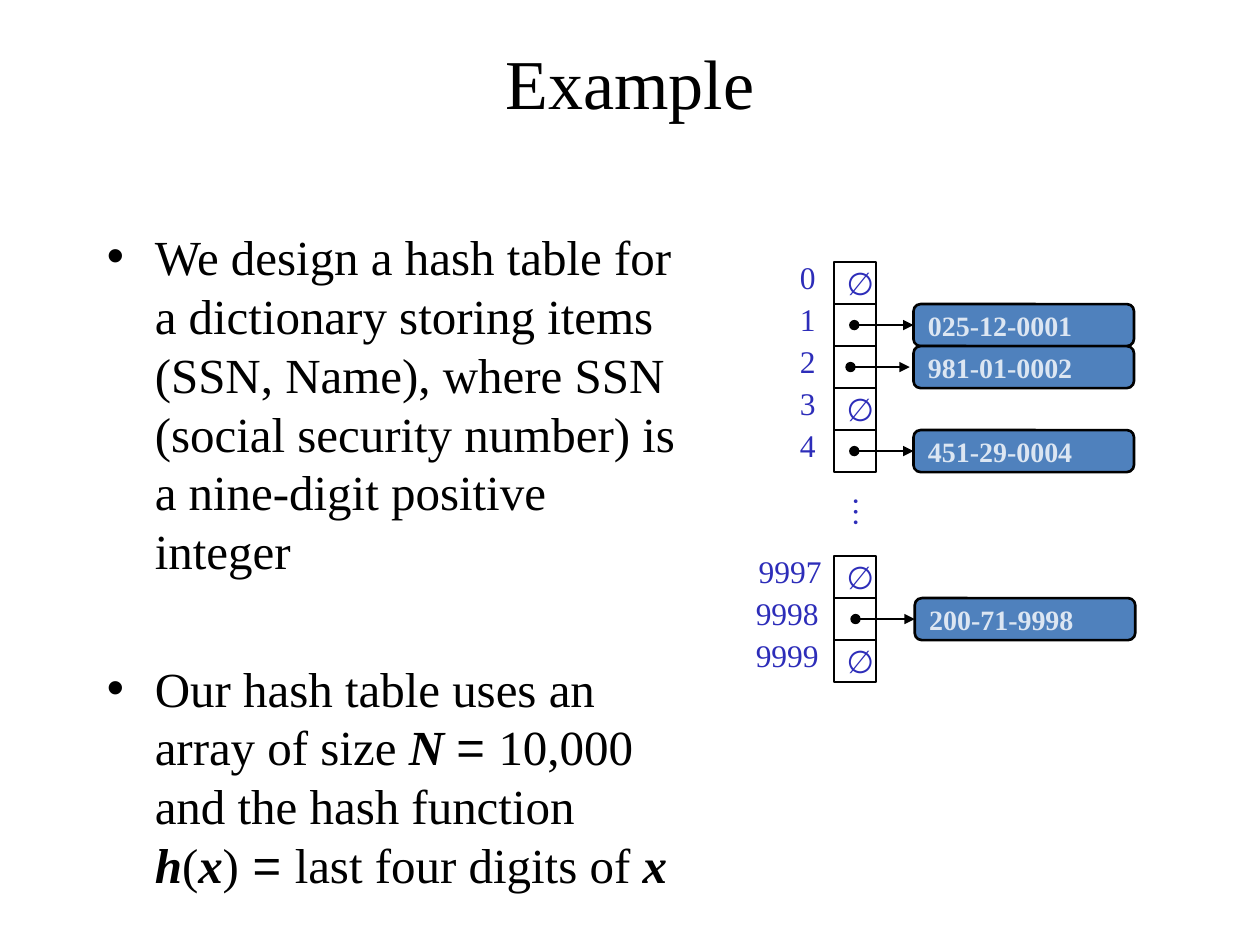
from lxml.etree import SubElement
from pptx import Presentation
from pptx.dml.color import RGBColor
from pptx.enum.shapes import MSO_CONNECTOR, MSO_SHAPE
from pptx.enum.text import MSO_ANCHOR, PP_ALIGN
from pptx.oxml.ns import qn
from pptx.util import Inches, Pt

COLORS = {
    "text": "000000",
    "index": "2D2DB9",
    "entry": "4F81BD",
    "entry_text": "DCE6F2",
}
SERIF = "Times New Roman"
ROW = 1 / 3
SLOTS = [
    (0, "0", 0.39, None),
    (1, "1", 0.39, ("025-12-0001", 0.92, 1.39)),
    (2, "2", 0.39, ("981-01-0002", 0.89, 1.36)),
    (3, "3", 0.39, None),
    (4, "4", 0.39, ("451-29-0004", 0.92, 1.39)),
    (7, "9997", 0, None),
    (8, "9998", 0.04, ("200-71-9998", 0.93, 1.4)),
    (9, "9999", 0.04, None),
]
BULLETS = [
    [("We design a hash table for a dictionary storing items (SSN, Name), "
      "where SSN (social security number) is a nine-digit positive integer", "plain")],
    [("Our hash table uses an array of size ", "plain"), ("N ", "variable"),
     ("= ", "symbol"), ("10,000 and the hash function", "plain"), ("", "break"),
     ("h", "variable"), ("(", "plain"), ("x", "variable"), (")", "plain"),
     (" = ", "symbol"), ("last four digits of ", "plain"), ("x", "variable")],
]


def color(name):
    return RGBColor.from_string(COLORS[name])


def style_run(run, size, color_name, font=SERIF, bold=False, italic=False):
    run.font.size = Pt(size)
    run.font.name = font
    run.font.bold = bold
    run.font.italic = italic
    run.font.color.rgb = color(color_name)


def add_text(slide, left, top, width, height):
    return slide.shapes.add_textbox(Inches(left), Inches(top), Inches(width), Inches(height))


def set_label(shape, text, size, color_name, font=SERIF, bold=False, alignment=PP_ALIGN.LEFT):
    frame = shape.text_frame
    frame.word_wrap = False
    frame.text = text
    paragraph = frame.paragraphs[0]
    paragraph.alignment = alignment
    style_run(paragraph.runs[0], size, color_name, font, bold)


def add_box(slide, kind, left, top, width, height, fill=None):
    shape = slide.shapes.add_shape(kind, Inches(left), Inches(top), Inches(width), Inches(height))
    shape.shadow.inherit = False
    if fill:
        shape.fill.solid()
        shape.fill.fore_color.rgb = color(fill)
    else:
        shape.fill.background()
    shape.line.color.rgb = color("text")
    shape.line.width = Pt(1.5)
    shape.text_frame.vertical_anchor = MSO_ANCHOR.MIDDLE
    return shape


def add_arrow(slide, start, end, y):
    connector = slide.shapes.add_connector(
        MSO_CONNECTOR.STRAIGHT, Inches(start), Inches(y), Inches(end), Inches(y))
    connector.line.color.rgb = color("text")
    connector.line.width = Pt(1.5)
    line = connector.line._get_or_add_ln()
    SubElement(line, qn("a:headEnd"), type="oval")
    SubElement(line, qn("a:tailEnd"), type="triangle")
    SubElement(connector._element.spPr, qn("a:effectLst"))


def add_title(slide, left, top, width, height):
    title = add_text(slide, left, top, width, height)
    set_label(title, "Example", 40, "text", alignment=PP_ALIGN.CENTER)
    title.text_frame.word_wrap = True
    title.text_frame.vertical_anchor = MSO_ANCHOR.MIDDLE


def add_bullets(slide, left, top, width, height):
    frame = add_text(slide, left, top, width, height).text_frame
    frame.word_wrap = True
    for number, parts in enumerate(BULLETS):
        paragraph = frame.add_paragraph() if number else frame.paragraphs[0]
        paragraph.line_spacing = Pt(33.6)
        paragraph.space_before = Pt(45 if number else 0)
        properties = paragraph._p.get_or_add_pPr()
        properties.set("marL", str(Inches(0.38)))
        properties.set("indent", str(Inches(-0.38)))
        SubElement(properties, qn("a:buFont"), typeface="Arial")
        SubElement(properties, qn("a:buChar"), char="•")
        for text, style in parts:
            if style == "break":
                paragraph.add_line_break()
                continue
            run = paragraph.add_run()
            run.text = text
            emphasis = style == "variable"
            font = "Arial" if style == "symbol" else SERIF
            style_run(run, 28, "text", font, emphasis, emphasis)


def add_hash_table(slide, left, top):
    for row, index, label_offset, entry in SLOTS:
        row_top = top + row * ROW
        cell = add_box(slide, MSO_SHAPE.RECTANGLE, left + 0.76, row_top, ROW, ROW)
        label = add_text(slide, left + label_offset, row_top - 0.08,
                         0.34 if len(index) == 1 else 0.76, 0.42)
        alignment = PP_ALIGN.RIGHT if label_offset == 0 else PP_ALIGN.LEFT
        set_label(label, index, 18, "index", alignment=alignment)
        if entry is None:
            set_label(cell, "∅", 18, "index", "Calibri")
            continue
        key, arrow_start, arrow_end = entry
        node_left = left + max(arrow_end, 1.39)
        node = add_box(slide, MSO_SHAPE.ROUNDED_RECTANGLE, node_left, row_top, 1.75, ROW, "entry")
        node.adjustments[0] = 0.17
        set_label(node, key, 16, "entry_text", bold=True)
        add_arrow(slide, left + arrow_start, left + arrow_end, row_top + ROW / 2)
    ellipsis = add_text(slide, left + 0.77, top + 1.79, 0.48, 0.42)
    set_label(ellipsis, "…", 18, "index")
    ellipsis.rotation = 90


def main():
    presentation = Presentation()
    presentation.slide_width = Inches(10)
    presentation.slide_height = Inches(7.5)
    slide = presentation.slides.add_slide(presentation.slide_layouts[6])
    add_title(slide, 0.5, 0.3, 9, 0.7)
    add_bullets(slide, 0.75, 1.75, 4.75, 5.08)
    add_hash_table(slide, 5.86, 2.08)
    presentation.save("out.pptx")


if __name__ == "__main__":
    main()
